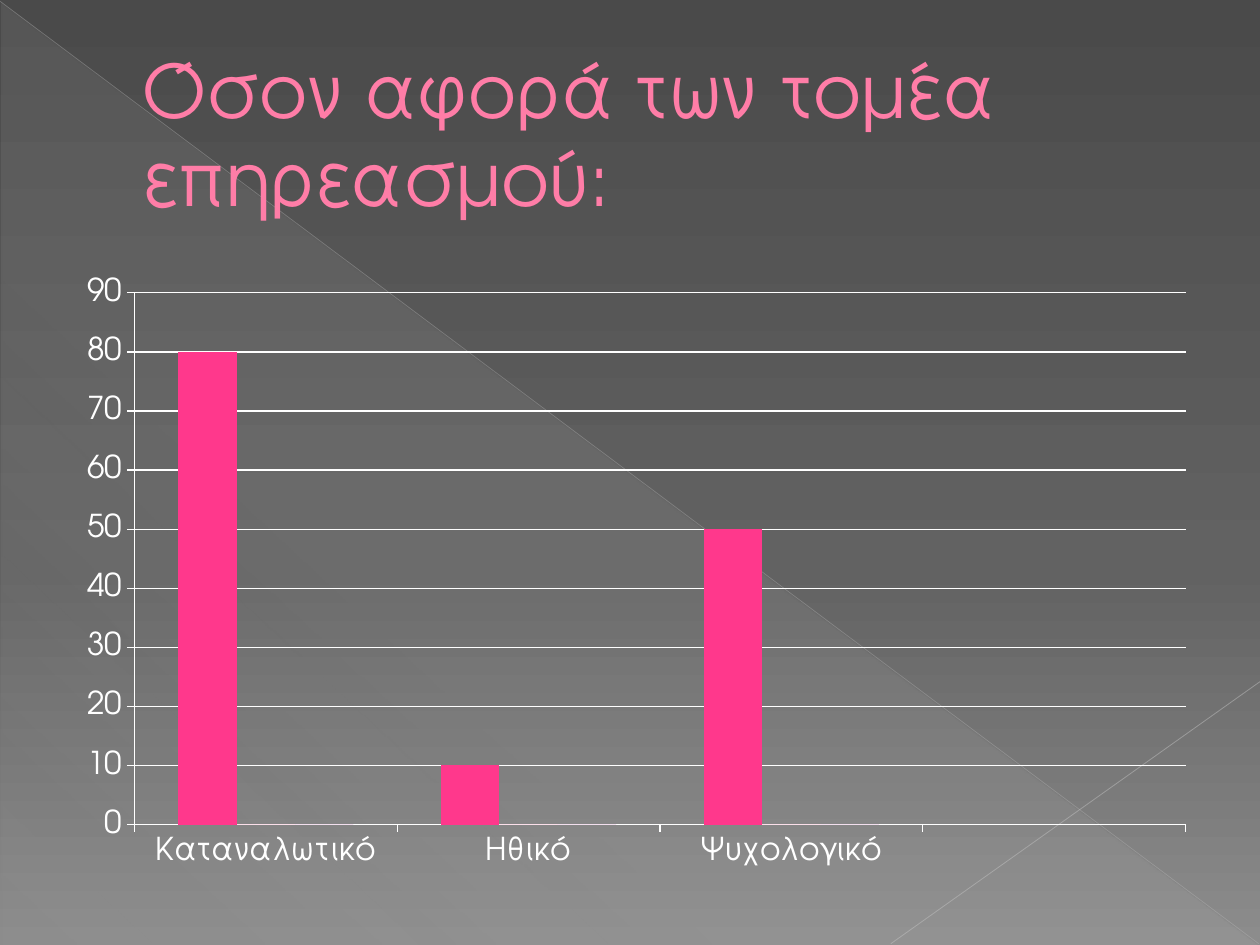
from lxml.etree import SubElement
from pptx import Presentation
from pptx.chart.data import CategoryChartData
from pptx.dml.color import RGBColor
from pptx.enum.chart import XL_CHART_TYPE as CT, XL_TICK_MARK as TM
from pptx.enum.shapes import MSO_CONNECTOR as CN, MSO_SHAPE as MS
from pptx.enum.text import MSO_ANCHOR, PP_ALIGN
from pptx.oxml import parse_xml
from pptx.oxml.ns import nsdecls, qn
from pptx.util import Inches, Pt

# Content
TITLE = "Όσον αφορά των τομέα επηρεασμού:"
CATEGORIES = ["Καταναλωτικό", "Ηθικό", "Ψυχολογικό", ""]
SERIES = [
    ("Series 1", [80, 10, 50, None], "FF388C"),
    ("Series 2", [0, 0, 0, None], "E40059"),
    ("Series 3", [0, 0, 0, None], "9C007F"),
]
PLOT = {"x": 0.063, "y": 0.053, "w": 0.927, "h": 0.844}  # shares of the chart

# Theme; gradient stops are position, colour, opacity (all in percent)
THEME = {
    "font": "TeX Gyre Adventor",
    "title_size": 42, "title": "FF7DA7", "title_edge": "B12761",
    "chart_size": 18, "chart": "FFFFFF",
    "backdrop": [(0, "4A4A4A", 100), (60, "626262", 100), (100, "8C8C8C", 100)],
    "sheen": [(0, "D2D2D2", 10), (70, "D2D2D2", 8), (100, "D2D2D2", 1)],
}
# Diagonals: start, end, colour, width, opacity
DIAGONALS = [
    ((0, 0.01), (9.99, 7.49), "BFBFBF", 0.39, 35),
    ((10, 5.41), (7.07, 7.49), "C6C6C6", 0.47, 45),
]


def rgb(name):
    return RGBColor.from_string(name)


def set_gradient(fill, parent, stops, angle):
    """Give the fill any number of stops, with opacity, along an angle."""
    fill.gradient()
    grad = parent.find(qn("a:gradFill"))
    gs = "".join(
        f'<a:gs pos="{pos * 1000}"><a:srgbClr val="{color}">'
        f'<a:alpha val="{alpha * 1000}"/></a:srgbClr></a:gs>'
        for pos, color, alpha in stops)
    parent.replace(grad, parse_xml(
        f'<a:gradFill {nsdecls("a")} rotWithShape="1"><a:gsLst>{gs}</a:gsLst>'
        f'<a:lin ang="{angle * 60000}" scaled="0"/></a:gradFill>'))


def style_line(line, color, width=0.75):
    line.color.rgb = rgb(color)
    line.width = Pt(width)


prs = Presentation()
prs.slide_width, prs.slide_height = Inches(10), Inches(7.5)
s = prs.slides.add_slide(prs.slide_layouts[5])
title = s.shapes.title

# Background
bg_fill = s.background.fill
bg_fill.solid()
set_gradient(bg_fill, s.element.find(".//" + qn("p:bgPr")), THEME["backdrop"], 90)

# Sheen triangle and diagonals
sheen = s.shapes.add_shape(MS.RIGHT_TRIANGLE, Inches(0.01), Inches(0.02),
                           Inches(9.98), Inches(7.48))
sheen.shadow.inherit = False
sheen.line.fill.background()
set_gradient(sheen.fill, sheen.element.spPr, THEME["sheen"], 133)

for start, end, color, width, alpha in DIAGONALS:
    cn = s.shapes.add_connector(CN.STRAIGHT, *map(Inches, start + end))
    style_line(cn.line, color, width)
    sp_pr = cn.element.spPr
    SubElement(sp_pr.find(".//" + qn("a:srgbClr")), qn("a:alpha"),
               val=str(alpha * 1000))
    SubElement(sp_pr, qn("a:effectLst"))

# Title, in front of the decoration
s.shapes.element.append(title.element)
title.left, title.top = Inches(0.5), Inches(0.29)
title.width, title.height = Inches(9), Inches(1.53)
tf = title.text_frame
tf.word_wrap = True
tf.vertical_anchor = MSO_ANCHOR.MIDDLE
p = tf.paragraphs[0]
p.alignment = PP_ALIGN.LEFT
p_pr = p._p.get_or_add_pPr()
p_pr.set("marL", str(Inches(0.53)))
p_pr.set("indent", "0")
r = p.add_run()
r.text = TITLE
r.font.name, r.font.size = THEME["font"], Pt(THEME["title_size"])
r.font.color.rgb = rgb(THEME["title"])
r.font._element.insert(0, parse_xml(
    f'<a:ln {nsdecls("a")} w="{Pt(0.5)}"><a:solidFill>'
    f'<a:srgbClr val="{THEME["title_edge"]}"/></a:solidFill></a:ln>'))

# Chart
data = CategoryChartData()
data.categories = CATEGORIES
for name, values, _ in SERIES:
    data.add_series(name, values)
chart = s.shapes.add_chart(CT.COLUMN_CLUSTERED, Inches(0.5), Inches(2.06),
                           Inches(9), Inches(5), data).chart
chart.has_legend = chart.has_title = False
chart.font.name, chart.font.size = THEME["font"], Pt(THEME["chart_size"])
chart.font.color.rgb = rgb(THEME["chart"])

plot = chart.plots[0]
plot.gap_width, plot.overlap = 150, 0
plot.vary_by_categories = False
for series, (_, _, color) in zip(plot.series, SERIES):
    series.format.fill.solid()
    series.format.fill.fore_color.rgb = rgb(color)
    series.invert_if_negative = False

for axis in (chart.category_axis, chart.value_axis):
    axis.major_tick_mark, axis.minor_tick_mark = TM.OUTSIDE, TM.NONE
    style_line(axis.format.line, THEME["chart"])
value_axis = chart.value_axis
value_axis.minimum_scale, value_axis.maximum_scale = 0, 90
value_axis.major_unit = 10
value_axis.has_major_gridlines = True
style_line(value_axis.major_gridlines.format.line, THEME["chart"])

# Fixed inner plot area
plot_area = chart._chartSpace.chart.plotArea
for old in plot_area.findall(qn("c:layout")):
    plot_area.remove(old)
layout = "".join(f'<c:{side}Mode val="edge"/>' for side in "xy")
layout += "".join(f'<c:{side} val="{share}"/>' for side, share in PLOT.items())
plot_area.insert(0, parse_xml(
    f'<c:layout {nsdecls("c")}><c:manualLayout><c:layoutTarget val="inner"/>'
    f'{layout}</c:manualLayout></c:layout>'))

prs.save("out.pptx")
